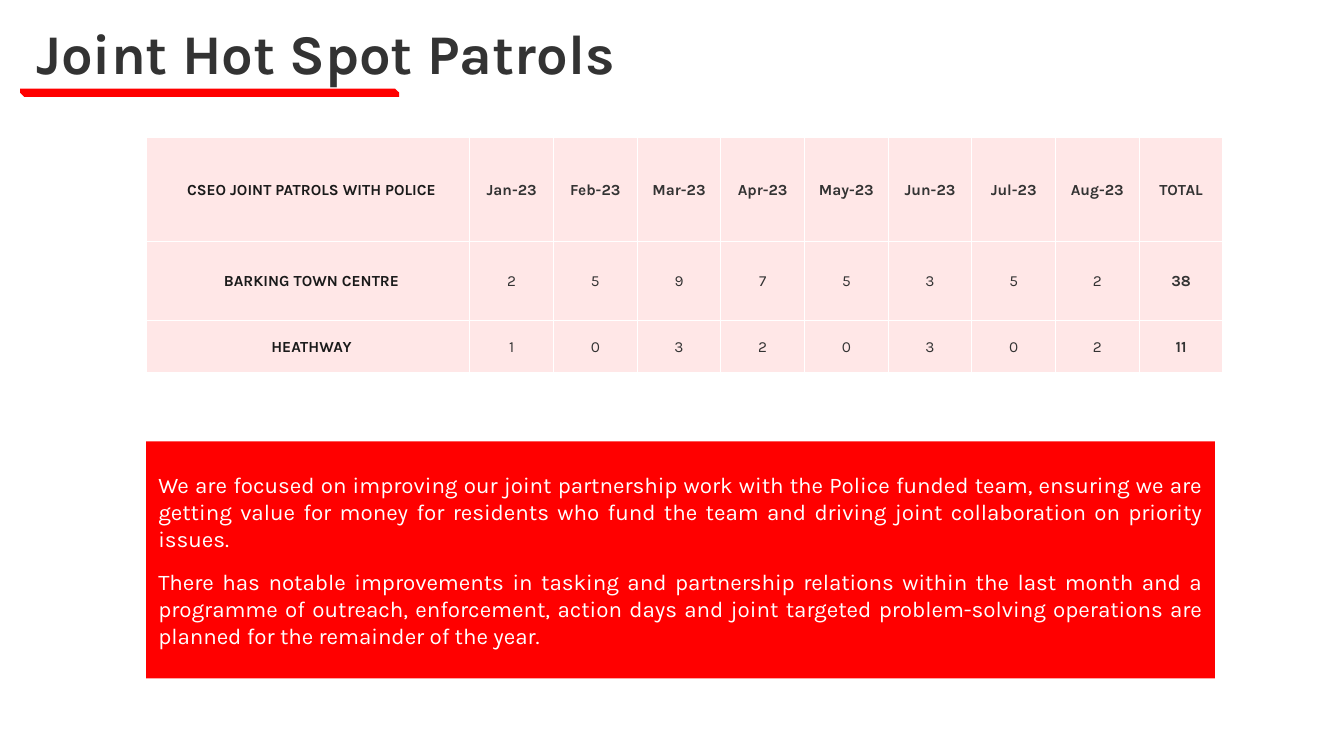
import pptx
import pptx.dml.color
import pptx.enum.shapes
import pptx.enum.text
import pptx.oxml
import pptx.oxml.ns
import pptx.util

PX = 9144  # EMU per px, 100 px to the inch
FONT = "Karla"
COLOURS = {
    "accent": "FF0000",
    "cell": "FFE7E7",
    "white": "FFFFFF",
    "text": "333333",
    "place": "1A1A1A",
}
ALIGN = pptx.enum.text.PP_ALIGN
MIDDLE = pptx.enum.text.MSO_ANCHOR.MIDDLE

MONTHS = ["Jan-23", "Feb-23", "Mar-23", "Apr-23", "May-23", "Jun-23", "Jul-23", "Aug-23"]
PATROLS = {
    "BARKING TOWN CENTRE": [2, 5, 9, 7, 5, 3, 5, 2],
    "HEATHWAY": [1, 0, 3, 2, 0, 3, 0, 2],
}
SUMMARY = [
    "We are focused on improving our joint partnership work with the Police funded team, "
    "ensuring we are getting value for money for residents who fund the team and driving "
    "joint collaboration on priority issues.",
    "There has notable improvements in tasking and partnership relations within the last "
    "month and a programme of outreach, enforcement, action days and joint targeted "
    "problem-solving operations are planned for the remainder of the year.",
]


def px(*lengths):
    return [pptx.util.Emu(length * PX) for length in lengths]


def rgb(name):
    return pptx.dml.color.RGBColor.from_string(COLOURS[name])


def set_margins(holder, left, top, right, bottom):
    holder.margin_left, holder.margin_top, holder.margin_right, holder.margin_bottom = px(
        left, top, right, bottom)


def write(frame, *paragraphs, size, colour="text", bold=False, align=ALIGN.LEFT,
          spacing=1.0, after=0):
    frame.word_wrap = True
    for index, wording in enumerate(paragraphs):
        paragraph = frame.paragraphs[0] if index == 0 else frame.add_paragraph()
        paragraph.alignment = align
        paragraph.line_spacing = spacing
        paragraph.space_before = pptx.util.Pt(0)
        paragraph.space_after = pptx.util.Pt(after)
        run = paragraph.add_run()
        run.text = wording
        run.font.name = FONT
        run.font.size = pptx.util.Pt(size)
        run.font.bold = bold
        run.font.color.rgb = rgb(colour)


def add_panel(slide, kind, box):
    panel = slide.shapes.add_shape(kind, *px(*box))
    panel.shadow.inherit = False
    panel.fill.solid()
    panel.fill.fore_color.rgb = rgb("accent")
    panel.line.fill.background()
    return panel


def add_heading(slide, left, top, width, height):
    # Red rule below the title
    rule = add_panel(slide, pptx.enum.shapes.MSO_SHAPE.SNIP_2_DIAG_RECTANGLE,
                     (left, top + height - 1, 376, 8))
    rule.adjustments[0], rule.adjustments[1] = 0, 0.5

    # Title
    title = slide.shapes.title
    title.left, title.top, title.width, title.height = px(left, top, width, height)
    frame = title.text_frame
    frame.auto_size = pptx.enum.text.MSO_AUTO_SIZE.NONE
    frame.vertical_anchor = MIDDLE
    set_margins(frame, 16, 16, 16, 16)
    write(frame, "Joint Hot Spot Patrols", size=40, bold=True, spacing=0.9)


def set_borders(cell):
    properties = cell._tc.get_or_add_tcPr()
    for position, side in enumerate(("lnL", "lnR", "lnT", "lnB")):
        properties.insert(position, pptx.oxml.parse_xml(
            f'<a:{side} {pptx.oxml.ns.nsdecls("a")} w="12700"><a:solidFill>'
            f'<a:srgbClr val="{COLOURS["white"]}"/></a:solidFill></a:{side}>'))


def add_patrol_table(slide, left, top, width, height):
    rows = [["CSEO JOINT PATROLS WITH POLICE", *MONTHS, "TOTAL"]]
    rows += [[place, *counts, sum(counts)] for place, counts in PATROLS.items()]
    last = len(rows[0]) - 1
    table = slide.shapes.add_table(len(rows), last + 1, *px(left, top, width, height)).table

    # Narrow month columns, the place column takes the rest
    month_width = 83
    for index, column in enumerate(table.columns):
        column.width, = px(month_width if index else width - last * month_width)
    for row, row_height in zip(table.rows, (104, 78, height - 182)):
        row.height, = px(row_height)

    # Cells
    for r, values in enumerate(rows):
        for c, value in enumerate(values):
            cell = table.cell(r, c)
            cell.fill.solid()
            cell.fill.fore_color.rgb = rgb("cell")
            cell.vertical_anchor = MIDDLE
            set_margins(cell, 1 if c else 8, 1, 1, 0)
            set_borders(cell)
            write(cell.text_frame, str(value), size=11, align=ALIGN.CENTER,
                  colour="text" if c else "place", bold=r == 0 or c in (0, last))


def add_summary(slide, *box):
    panel = add_panel(slide, pptx.enum.shapes.MSO_SHAPE.RECTANGLE, box)
    panel.text_frame.vertical_anchor = MIDDLE
    set_margins(panel.text_frame, 12, 12, 12, 12)
    write(panel.text_frame, *SUMMARY, size=16, colour="white", align=ALIGN.JUSTIFY, after=12)


def main():
    deck = pptx.Presentation()
    deck.slide_width, deck.slide_height = px(1333, 750)
    slide = deck.slides.add_slide(deck.slide_layouts.get_by_name("Title Only"))
    add_heading(slide, 20, 23, 1106, 66)
    add_summary(slide, 145, 438, 1060, 235)
    add_patrol_table(slide, 145, 136, 1068, 234)
    deck.save("out.pptx")


if __name__ == "__main__":
    main()
